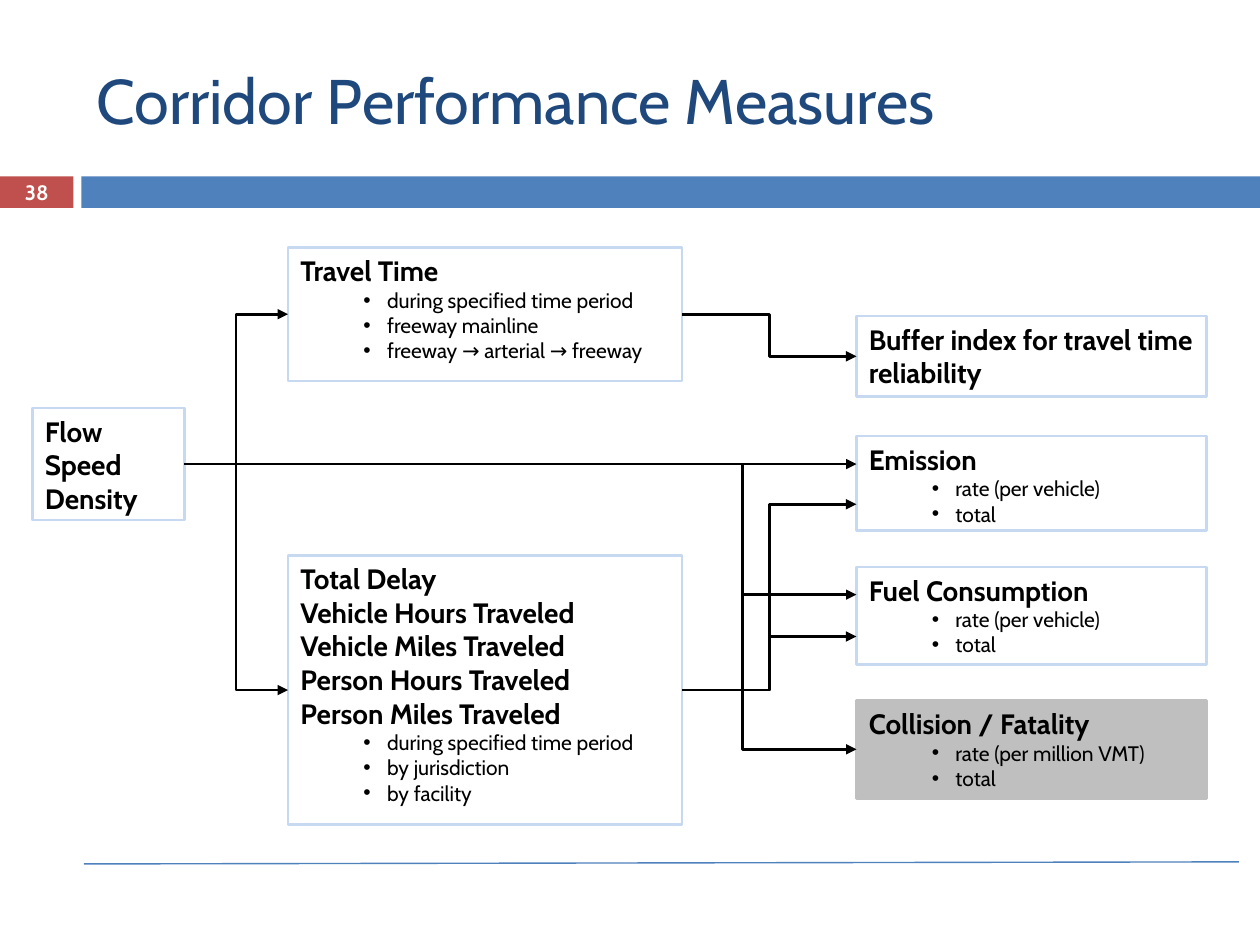
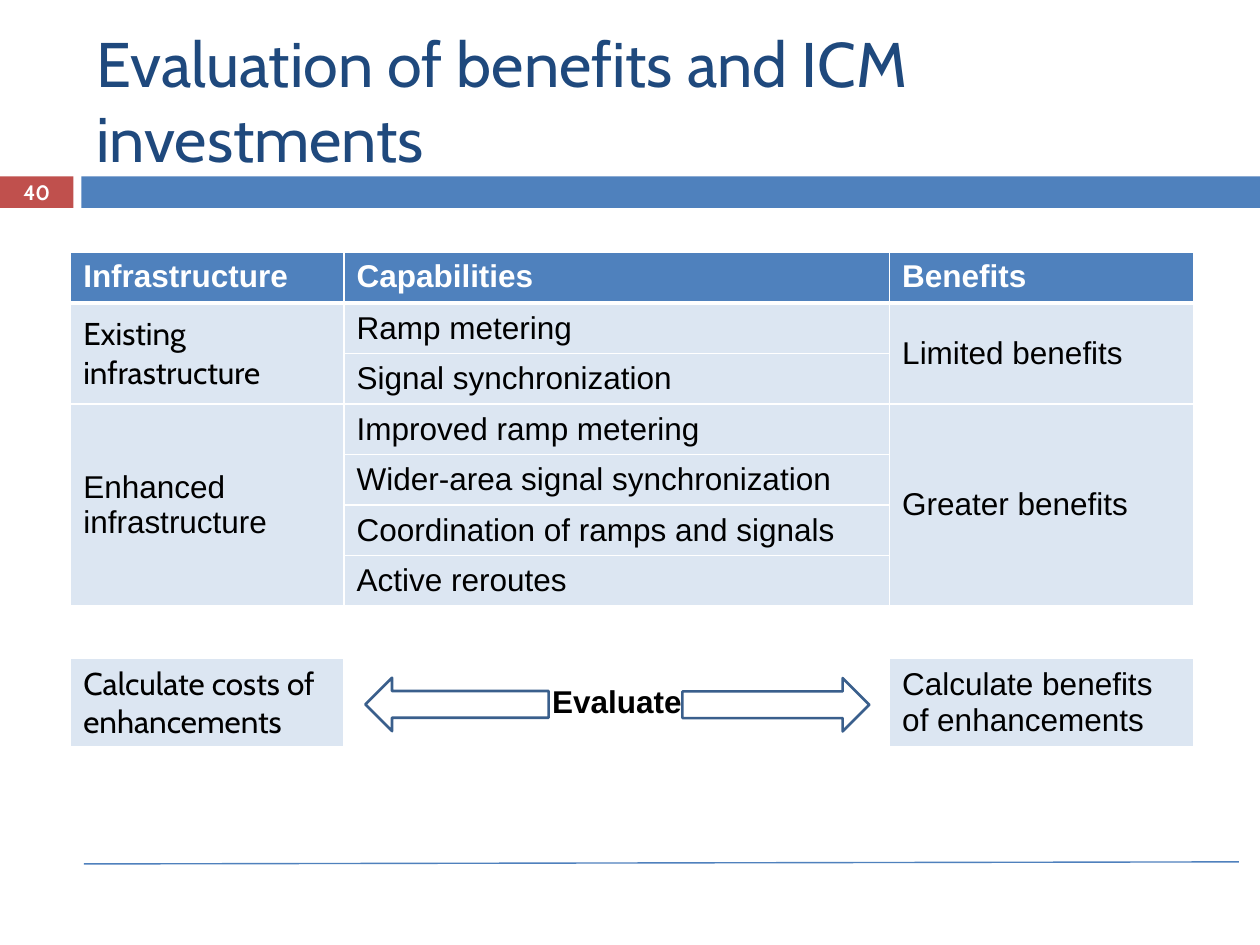
"""Build two slides on corridor performance measures and investment benefits."""
from lxml import etree
from pptx import Presentation
from pptx import util as u
from pptx.dml import color
from pptx.enum import shapes, text
from pptx.oxml import ns

Pt = u.Pt
NAVY, BLUE, RED, PALE, ICE = "1F497D", "4F81BD", "C0504D", "C6D9F1", "DCE6F2"
BLACK, WHITE, GREY, ARROW_BLUE = "000000", "FFFFFF", "BFBFBF", "3A5F8C"
CABIN, ARIAL = "Cabin", "Arial"
HEADING = {"name": CABIN, "size": Pt(16), "bold": True}
DETAIL = {"name": CABIN, "size": Pt(12), "bold": False}


def rgb(value):
    """Turn a hex string into a colour."""
    return color.RGBColor.from_string(value)


def assign(target, values):
    """Set every attribute named in a dict of values."""
    for name, value in values.items():
        setattr(target, name, value)


def add_xml(parent, tag, **attributes):
    """Append a DrawingML element to a parent."""
    return etree.SubElement(parent, ns.qn(tag), attributes)


class Deck:
    """Hold the shared style and the current slide."""

    def __init__(self):
        """Start an empty presentation."""
        self.presentation = Presentation()
        self.presentation.slide_width = Pt(720)
        self.presentation.slide_height = Pt(540)
        self.slide = None

    def new_slide(self, title, number):
        """Add a slide with its title, bands, number and footer line."""
        layout = self.presentation.slide_layouts.get_by_name("Title Only")
        self.slide = self.presentation.slides.add_slide(layout)
        self.shape(0, 100.8, 42, 18, fill=RED)
        self.shape(46.5, 100.8, 673.5, 18, fill=BLUE)
        self.line(48, 493.7, 708, 492.5, BLUE, 0.79)
        placeholder = self.slide.shapes.title
        assign(placeholder, {"left": Pt(48), "top": Pt(18),
                             "width": Pt(642), "height": Pt(78)})
        frame = placeholder.text_frame
        assign(frame, {"vertical_anchor": text.MSO_ANCHOR.MIDDLE, "word_wrap": True,
                       "auto_size": text.MSO_AUTO_SIZE.NONE})
        self.fill_text(frame.paragraphs[0], title, {"name": CABIN, "size": Pt(36)}, NAVY)
        self.page_number(number)

    def page_number(self, number):
        """Put the slide number on the red band."""
        frame = self.slide.shapes.add_textbox(0, Pt(100), Pt(42), Pt(19.5)).text_frame
        assign(frame, {"word_wrap": True, "vertical_anchor": text.MSO_ANCHOR.MIDDLE,
                       "margin_left": 0, "margin_right": 0,
                       "margin_top": 0, "margin_bottom": 0})
        self.fill_text(frame.paragraphs[0], number,
                       {"name": CABIN, "size": Pt(11.9), "bold": True}, WHITE,
                       text.PP_ALIGN.CENTER)

    def fill_text(self, paragraph, words, font, ink=BLACK, align=text.PP_ALIGN.LEFT):
        """Fill one paragraph with formatted text."""
        paragraph.text = words
        paragraph.alignment = align
        assign(paragraph.font, font)
        paragraph.font.color.rgb = rgb(ink)

    def shape(self, left, top, width, height, fill=None, outline=None,
              kind=shapes.MSO_SHAPE.RECTANGLE):
        """Add a preset shape with an optional fill and outline."""
        shape = self.slide.shapes.add_shape(kind, Pt(left), Pt(top), Pt(width), Pt(height))
        shape.shadow.inherit = False
        if fill:
            shape.fill.solid()
            shape.fill.fore_color.rgb = rgb(fill)
        else:
            shape.fill.background()
        if outline:
            shape.line.color.rgb = rgb(outline)
            shape.line.width = Pt(1.5)
        else:
            shape.line.fill.background()
        return shape

    def box(self, left, top, width, height, headings, details=(), fill=WHITE, outline=PALE):
        """Add an outlined box of bold headings over bulleted details."""
        shape = self.shape(left, top, width, height, fill, outline)
        frame = shape.text_frame
        assign(frame, {"word_wrap": True, "vertical_anchor": text.MSO_ANCHOR.TOP})
        for index, words in enumerate([*headings, *details]):
            paragraph = frame.add_paragraph() if index else frame.paragraphs[0]
            is_detail = index >= len(headings)
            if is_detail:
                paragraph.level = 1
                properties = paragraph._p.get_or_add_pPr()
                properties.set("marL", str(Pt(49.5)))
                properties.set("indent", str(Pt(-13.5)))
                add_xml(properties, "a:buFont", typeface=ARIAL)
                add_xml(properties, "a:buChar", char="•")
            self.fill_text(paragraph, words, DETAIL if is_detail else HEADING)
        return shape

    def line(self, x1, y1, x2, y2, ink, width, kind=shapes.MSO_CONNECTOR.STRAIGHT):
        """Add a connector without a shadow."""
        connector = self.slide.shapes.add_connector(kind, Pt(x1), Pt(y1), Pt(x2), Pt(y2))
        connector.line.color.rgb = rgb(ink)
        connector.line.width = Pt(width)
        add_xml(connector.element.spPr, "a:effectLst")
        return connector

    def link(self, source, target, rise=0, bend=0.5):
        """Draw an elbow arrow from a box's right side to another's left side."""
        start_x = u.Emu(source.left + source.width).pt
        start_y, end_y = (u.Emu(box.top + box.height // 2).pt for box in (source, target))
        connector = self.line(start_x, start_y, target.left.pt, end_y + rise,
                              BLACK, 1.5, shapes.MSO_CONNECTOR.ELBOW)
        properties = connector.element.spPr
        add_xml(properties.find(ns.qn("a:ln")), "a:tailEnd", type="triangle")
        guides = properties.find(ns.qn("a:prstGeom")).get_or_add_avLst()
        add_xml(guides, "a:gd", name="adj1", fmla=f"val {round(bend * 100000)}")

    def table(self, left, top, widths, heights, rows, merges):
        """Add a table with a header row and merged cells."""
        frame = self.slide.shapes.add_table(len(heights), len(widths), Pt(left), Pt(top),
                                            Pt(sum(widths)), Pt(sum(heights)))
        table = frame.table
        table.horz_banding = False
        for column, width in zip(table.columns, widths):
            column.width = Pt(width)
        for row, height in zip(table.rows, heights):
            row.height = Pt(height)
        for first, last, column in merges:
            table.cell(first, column).merge(table.cell(last, column))
        for row_index, row in enumerate(rows):
            for column_index, words in enumerate(row):
                self.cell(table.cell(row_index, column_index), row_index, words)

    def cell(self, cell, row_index, words):
        """Format one table cell by its row and wording."""
        is_header = row_index == 0
        properties = cell._tc.get_or_add_tcPr()
        heavy = {0: "a:lnB", 1: "a:lnT"}.get(row_index)
        for side in ("a:lnL", "a:lnR", "a:lnT", "a:lnB"):
            border = add_xml(properties, side, w=str(Pt(3 if side == heavy else 1)))
            add_xml(add_xml(border, "a:solidFill"), "a:srgbClr", val=WHITE)
        centred = words == "Evaluate"
        if centred or words is None:
            cell.fill.background()
        else:
            cell.fill.solid()
            cell.fill.fore_color.rgb = rgb(BLUE if is_header else ICE)
        cell.vertical_anchor = text.MSO_ANCHOR.TOP if is_header else text.MSO_ANCHOR.MIDDLE
        in_cabin = words in ("Existing infrastructure", "Calculate costs of enhancements")
        self.fill_text(cell.text_frame.paragraphs[0], words or "",
                       {"name": CABIN if in_cabin else ARIAL, "size": Pt(18),
                        "bold": is_header or centred},
                       WHITE if is_header else BLACK,
                       text.PP_ALIGN.CENTER if centred else text.PP_ALIGN.LEFT)


def add_measures(deck):
    """Build the flow chart of performance measures."""
    deck.new_slide("Corridor Performance Measures", "38")
    per_vehicle = ["rate (per vehicle)", "total"]
    period = "during specified time period"
    middle, right = (164.6, 225.2), (489.4, 200)
    flow = deck.box(18.6, 233.2, 86.8, 64, ["Flow", "Speed", "Density"])
    travel = deck.box(middle[0], 141.5, middle[1], 76.2, ["Travel Time"],
                      [period, "freeway mainline", "freeway → arterial → freeway"])
    traveled = [f"{unit} {measure} Traveled" for unit in ("Vehicle", "Person")
                for measure in ("Hours", "Miles")]
    delay = deck.box(middle[0], 317.5, middle[1], 153.7, ["Total Delay", *traveled],
                     [period, "by jurisdiction", "by facility"])
    buffer = deck.box(right[0], 180.5, right[1], 46.2,
                      ["Buffer index for travel time reliability"])
    emission = deck.box(right[0], 249.2, right[1], 54, ["Emission"], per_vehicle)
    fuel = deck.box(right[0], 324, right[1], 55.6, ["Fuel Consumption"], per_vehicle)
    collision = deck.box(right[0], 400.2, right[1], 56, ["Collision / Fatality"],
                         ["rate (per million VMT)", "total"], GREY, GREY)
    for source, target, rise, bend in (
            (flow, travel, 0, 0.5), (flow, delay, 0, 0.5),
            (delay, emission, 12, 0.5), (delay, fuel, 12, 0.5),
            (travel, buffer, 0, 0.5), (flow, emission, -11, 0.5),
            (flow, fuel, -12, 0.83), (flow, collision, 0, 0.83)):
        deck.link(source, target, rise, bend)


def add_evaluation(deck):
    """Build the table that weighs costs against benefits."""
    deck.new_slide("Evaluation of benefits and ICM investments", "40")
    rows = [
        ["Infrastructure", "Capabilities", "Benefits"],
        ["Existing infrastructure", "Ramp metering", "Limited benefits"],
        ["", "Signal synchronization", ""],
        ["Enhanced infrastructure", "Improved ramp metering", "Greater benefits"],
        ["", "Wider-area signal synchronization", ""],
        ["", "Coordination of ramps and signals", ""],
        ["", "Active reroutes", ""],
        [None, None, None],
        ["Calculate costs of enhancements", "Evaluate", "Calculate benefits of enhancements"],
    ]
    merges = [(first, last, column) for first, last in ((1, 2), (3, 6)) for column in (0, 2)]
    deck.table(40.4, 144.2, [156.2, 311.8, 174], [29, *[27.4] * 6, 30, 50.6], rows, merges)
    deck.shape(390, 387.5, 106.8, 30.5, outline=ARROW_BLUE,
               kind=shapes.MSO_SHAPE.RIGHT_ARROW)
    deck.shape(208.8, 387.3, 104.7, 30.5, outline=ARROW_BLUE,
               kind=shapes.MSO_SHAPE.LEFT_ARROW)


def main():
    """Build and save the presentation."""
    deck = Deck()
    add_measures(deck)
    add_evaluation(deck)
    deck.presentation.save("out.pptx")


if __name__ == "__main__":
    main()
